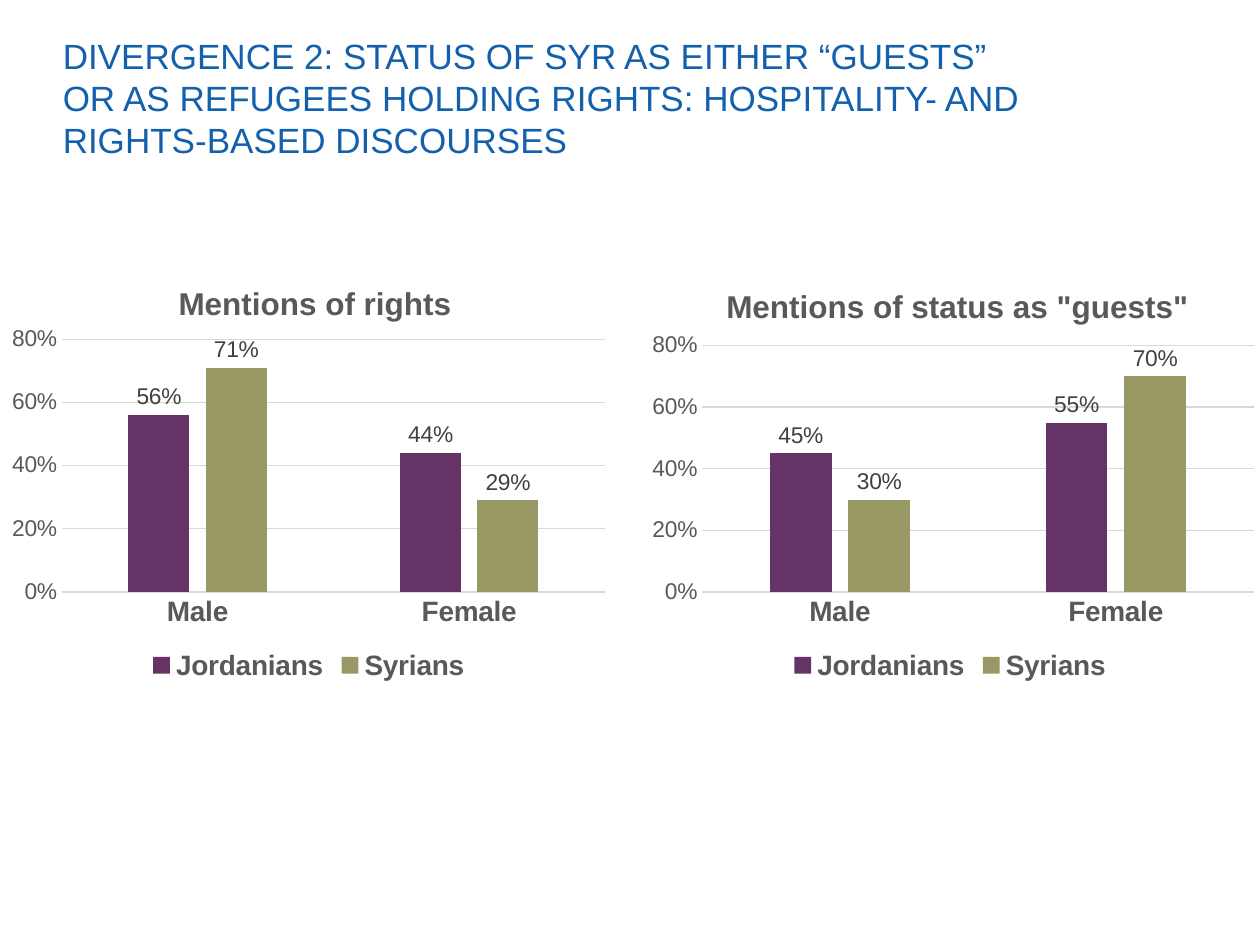
from dataclasses import dataclass

from lxml.etree import SubElement
from pptx import Presentation
from pptx.chart.data import CategoryChartData
from pptx.dml.color import RGBColor
from pptx.enum.chart import XL_CHART_TYPE, XL_LABEL_POSITION, XL_LEGEND_POSITION, XL_TICK_MARK
from pptx.enum.text import MSO_ANCHOR
from pptx.oxml import parse_xml
from pptx.oxml.ns import nsdecls, qn
from pptx.slide import Slide
from pptx.util import Inches, Pt

BLUE = RGBColor(0x13, 0x60, 0xAD)
BLACK = RGBColor(0, 0, 0)
DARK_GRAY = RGBColor(0x40, 0x40, 0x40)
GRAY = RGBColor(0x59, 0x59, 0x59)
LIGHT_GRAY = RGBColor(0xD9, 0xD9, 0xD9)
PURPLE = RGBColor(0x66, 0x33, 0x66)
OLIVE = RGBColor(0x99, 0x99, 0x66)

WIDTH, HEIGHT = Inches(10), Inches(7.5)
CATEGORIES = ("Male", "Female")
GROUP_COLORS = {"Jordanians": PURPLE, "Syrians": OLIVE}


@dataclass
class SlideBuilder:
    """Draws styled elements on one slide, placed by shares of its size."""

    slide: Slide
    font_name: str = "Arial"
    value_size: float = 13
    label_size: float = 16
    heading_size: float = 18
    title_size: float = 20

    def box(self, left, top, width, height):
        """Turn shares of the slide into lengths."""
        return (int(left * WIDTH), int(top * HEIGHT),
                int(width * WIDTH), int(height * HEIGHT))

    def style(self, font, size, color, bold=False):
        """Set the face, size, colour and weight of a font."""
        font.name = self.font_name
        font.size = Pt(size)
        font.bold = bold
        font.color.rgb = color

    def title(self, text, *shares):
        """Add the slide title."""
        frame = self.slide.shapes.add_textbox(*self.box(*shares)).text_frame
        frame.word_wrap = True
        frame.vertical_anchor = MSO_ANCHOR.TOP
        paragraph = frame.paragraphs[0]
        paragraph.text = text
        paragraph.line_spacing = Pt(24)
        self.style(paragraph.font, self.title_size, BLUE)

    def place(self, parent, position, inner=False):
        """Give a chart title or plot area a fixed place within the chart."""
        for old in parent.findall(qn("c:layout")):
            parent.remove(old)
        layout = parse_xml(f"<c:layout {nsdecls('c')}><c:manualLayout/></c:layout>")
        manual = layout[0]
        settings = [("layoutTarget", "inner")] if inner else []
        settings += [("xMode", "edge"), ("yMode", "edge")]
        settings += zip("xywh", position)
        for name, value in settings:
            SubElement(manual, qn(f"c:{name}")).set("val", str(value))
        text = parent.find(qn("c:tx"))
        parent.insert(0 if text is None else 1, layout)

    def column_chart(self, heading, groups, shares, heading_place, plot_place):
        """Add a clustered column chart of percentages."""
        data = CategoryChartData(number_format="0%")
        data.categories = CATEGORIES
        for name, values in groups.items():
            data.add_series(name, values)
        chart = self.slide.shapes.add_chart(
            XL_CHART_TYPE.COLUMN_CLUSTERED, *self.box(*shares), data).chart
        self.style(chart.font, self.value_size, BLACK)

        chart.has_title = True
        paragraph = chart.chart_title.text_frame.paragraphs[0]
        paragraph.text = heading
        self.style(paragraph.font, self.heading_size, GRAY, True)
        chart.chart_title.include_in_layout = False
        self.place(paragraph._p.getparent().getparent().getparent(), heading_place)
        plot = chart.plots[0]
        self.place(plot._element.getparent(), plot_place, inner=True)

        chart.has_legend = True
        chart.legend.position = XL_LEGEND_POSITION.BOTTOM
        chart.legend.include_in_layout = False
        self.style(chart.legend.font, self.label_size, GRAY, True)
        self.axes(chart)

        plot.gap_width, plot.overlap = 219, -27
        plot.vary_by_categories = False
        for series in plot.series:
            series.format.fill.solid()
            series.format.fill.fore_color.rgb = GROUP_COLORS[series.name]
            labels = series.data_labels
            labels.show_value = True
            labels.number_format = "0%"
            labels.number_format_is_linked = False
            labels.position = XL_LABEL_POSITION.OUTSIDE_END
            self.style(labels.font, self.value_size, DARK_GRAY)

    def axes(self, chart):
        """Style both axes and the gridlines of a chart."""
        category_axis, value_axis = chart.category_axis, chart.value_axis
        for axis in (category_axis, value_axis):
            axis.major_tick_mark = axis.minor_tick_mark = XL_TICK_MARK.NONE
        self.style(category_axis.tick_labels.font, self.label_size, GRAY, True)
        self.style(value_axis.tick_labels.font, self.value_size, GRAY)
        value_axis.minimum_scale, value_axis.maximum_scale = 0, 0.8
        value_axis.major_unit = 0.2
        value_axis.tick_labels.number_format = "0%"
        value_axis.tick_labels.number_format_is_linked = False
        value_axis.format.line.fill.background()
        for line in (category_axis.format.line, value_axis.major_gridlines.format.line):
            line.color.rgb = LIGHT_GRAY
            line.width = Pt(0.75)


def main():
    """Build and save the slide."""
    presentation = Presentation()
    presentation.slide_width, presentation.slide_height = WIDTH, HEIGHT
    builder = SlideBuilder(presentation.slides.add_slide(presentation.slide_layouts[6]))
    builder.title(
        "DIVERGENCE 2: STATUS OF SYR AS EITHER “GUESTS” OR AS REFUGEES HOLDING RIGHTS: "
        "HOSPITALITY- AND RIGHTS-BASED DISCOURSES", 0.04, 0.03, 0.8, 0.16)
    builder.column_chart(
        "Mentions of rights",
        {"Jordanians": (0.56, 0.44), "Syrians": (0.71, 0.29)},
        (0, 0.27, 0.49, 0.456), (0.28, 0.05), (0.1, 0.195, 0.88, 0.587))
    builder.column_chart(
        'Mentions of status as "guests"',
        {"Jordanians": (0.45, 0.55), "Syrians": (0.3, 0.7)},
        (0.508, 0.27, 0.492, 0.456), (0.13, 0.057), (0.1, 0.21, 0.89, 0.572))
    presentation.save("out.pptx")


if __name__ == "__main__":
    main()
